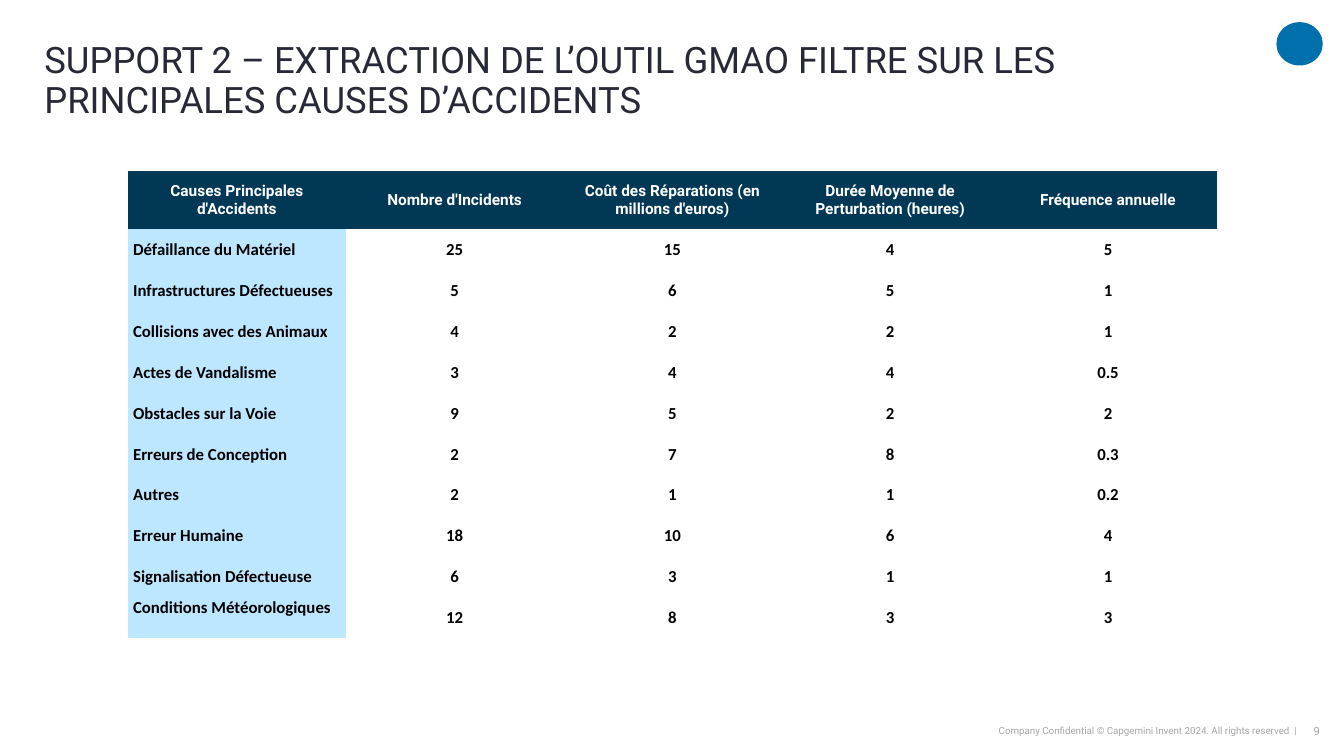
import pptx
import pptx.dml.color
import pptx.enum.shapes
import pptx.enum.text
import pptx.util
from pptx.util import Inches

ALIGN = pptx.enum.text.PP_ALIGN
ANCHOR = pptx.enum.text.MSO_ANCHOR
PLAIN_TABLE_STYLE = "{2D5ABB26-0587-4C30-8999-92F81FD0307C}"

HEADINGS = [
    "Causes Principales d'Accidents",
    "Nombre d'Incidents",
    "Coût des Réparations (en millions d'euros)",
    "Durée Moyenne de Perturbation (heures)",
    "Fréquence annuelle",
]
CAUSES = [
    ("Défaillance du Matériel", "25", "15", "4", "5"),
    ("Infrastructures Défectueuses", "5", "6", "5", "1"),
    ("Collisions avec des Animaux", "4", "2", "2", "1"),
    ("Actes de Vandalisme", "3", "4", "4", "0.5"),
    ("Obstacles sur la Voie", "9", "5", "2", "2"),
    ("Erreurs de Conception", "2", "7", "8", "0.3"),
    ("Autres", "2", "1", "1", "0.2"),
    ("Erreur Humaine", "18", "10", "6", "4"),
    ("Signalisation Défectueuse", "6", "3", "1", "1"),
    ("Conditions Météorologiques", "12", "8", "3", "3"),
]


def color(code):
    return pptx.dml.color.RGBColor.from_string(code)


class Report:
    FONT = "Roboto"
    TABLE_FONT = "Calibri"
    INK = "272936"
    GREY = "A6A6A6"
    NAVY = "003856"
    SKY = "BCE7FF"
    BLUE = "0070AD"

    def __init__(self, deck):
        self.page = deck.slides.add_slide(deck.slide_layouts[5])

    def set_text(self, frame, text, size, code, align, font=FONT, bold=False):
        """Fill a text frame with one formatted paragraph and return it."""
        frame.text = text
        para = frame.paragraphs[0]
        para.alignment = align
        para.font.name = font
        para.font.size = pptx.util.Pt(size)
        para.font.bold = bold
        para.font.color.rgb = color(code)
        return para

    def set_frame(self, frame):
        """Wrap and centre vertically, without margins or resizing."""
        frame.word_wrap = True
        frame.auto_size = pptx.enum.text.MSO_AUTO_SIZE.NONE
        frame.vertical_anchor = ANCHOR.MIDDLE
        frame.margin_left = frame.margin_right = 0
        frame.margin_top = frame.margin_bottom = 0

    def title(self, text, left, top, width, height):
        box = self.page.shapes.title
        box.left, box.top = Inches(left), Inches(top)
        box.width, box.height = Inches(width), Inches(height)
        self.set_frame(box.text_frame)
        para = self.set_text(box.text_frame, text, 26, self.INK, ALIGN.LEFT)
        para.line_spacing = 0.9

    def footer(self, text, size, left, width):
        box = self.page.shapes.add_textbox(
            Inches(left), Inches(7.13), Inches(width), Inches(0.24))
        self.set_frame(box.text_frame)
        self.set_text(box.text_frame, text, size, self.GREY, ALIGN.RIGHT)

    def emblem(self, left, top, width, height):
        oval = self.page.shapes.add_shape(
            pptx.enum.shapes.MSO_SHAPE.OVAL,
            Inches(left), Inches(top), Inches(width), Inches(height))
        oval.shadow.inherit = False
        oval.fill.solid()
        oval.fill.fore_color.rgb = color(self.BLUE)
        oval.line.fill.background()

    def cell(self, cell, text, size, code, align, font, fill=None):
        cell.vertical_anchor = ANCHOR.MIDDLE
        cell.margin_left = cell.margin_right = Inches(0.05)
        cell.margin_top, cell.margin_bottom = Inches(0.01), 0
        if fill:
            cell.fill.solid()
            cell.fill.fore_color.rgb = color(fill)
        else:
            cell.fill.background()
        self.set_text(cell.text_frame, text, size, code, align, font, bold=True)

    def table(self, headings, records, left, top, width, height):
        frame = self.page.shapes.add_table(
            len(records) + 1, len(headings),
            Inches(left), Inches(top), Inches(width), Inches(height))
        table = frame.table
        table.first_row = table.horz_banding = False
        style = frame._element.find(".//{*}tableStyleId")
        style.text = PLAIN_TABLE_STYLE

        heading_height = 0.57
        table.rows[0].height = Inches(heading_height)
        for row in list(table.rows)[1:]:
            row.height = Inches((height - heading_height) / len(records))

        for column, heading in enumerate(headings):
            self.cell(table.cell(0, column), heading, 11, "FFFFFF",
                      ALIGN.CENTER, self.FONT, self.NAVY)
        for row, (cause, *values) in enumerate(records, start=1):
            self.cell(table.cell(row, 0), cause, 12, "000000",
                      ALIGN.LEFT, self.TABLE_FONT, self.SKY)
            for column, value in enumerate(values, start=1):
                self.cell(table.cell(row, column), value, 12, "000000",
                          ALIGN.CENTER, self.TABLE_FONT)
        table.cell(len(records), 0).vertical_anchor = ANCHOR.TOP


def main():
    deck = pptx.Presentation()
    deck.slide_width, deck.slide_height = Inches(13.33), Inches(7.5)
    report = Report(deck)
    report.emblem(12.66, 0.22, 0.46, 0.43)
    report.footer("9", 8, 12.84, 0.25)
    report.footer("Company Confidential © Capgemini Invent 2024. "
                  "All rights reserved  |", 7, 7.9, 4.96)
    report.title("SUPPORT 2 – EXTRACTION DE L’OUTIL GMAO FILTRE SUR LES "
                 "PRINCIPALES CAUSES D’ACCIDENTS", 0.44, 0.42, 11.97, 0.78)
    report.table(HEADINGS, CAUSES, 1.27, 1.7, 10.8, 4.63)
    deck.save("out.pptx")


if __name__ == "__main__":
    main()
